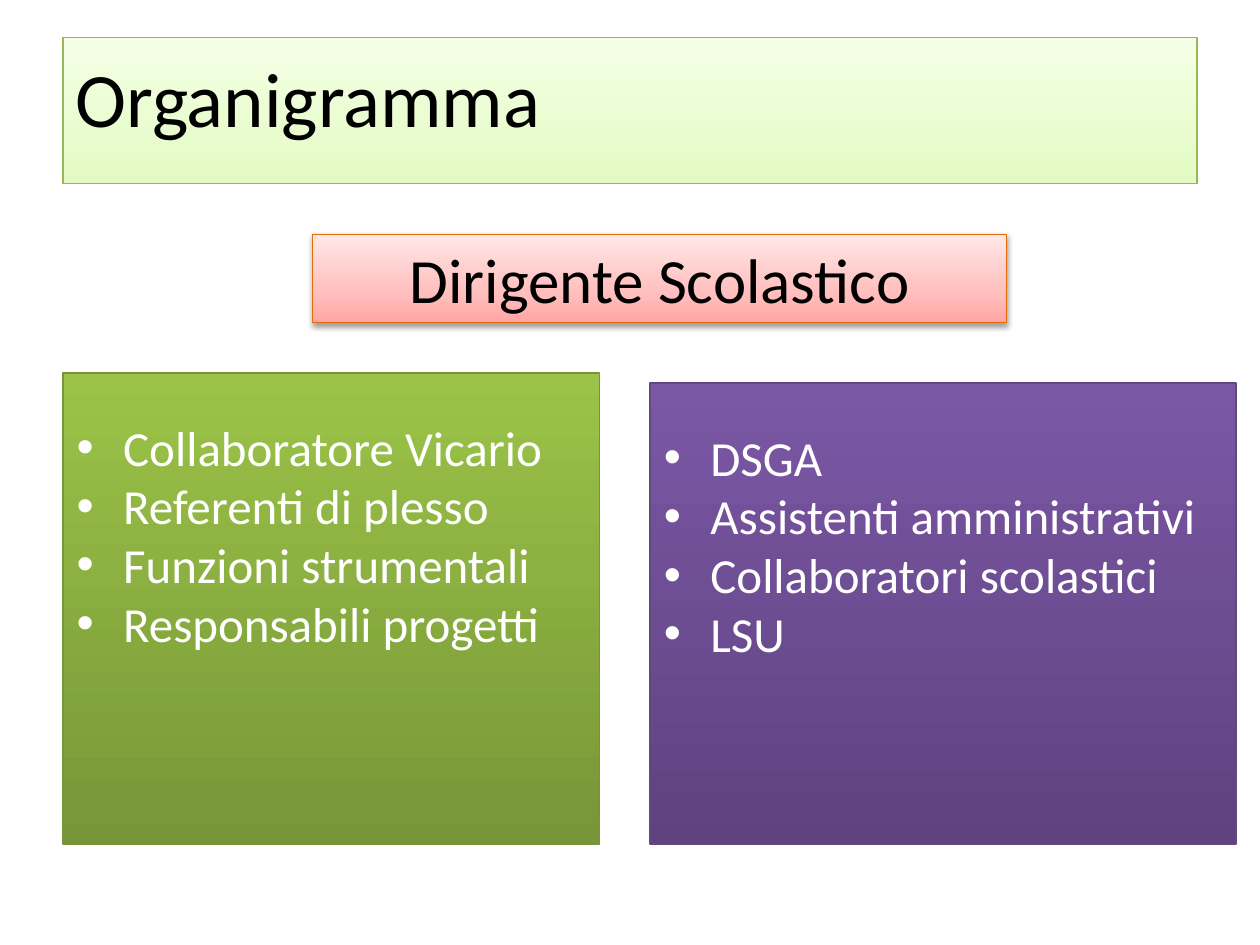
import copy
import lxml.etree
import pptx
import pptx.util
import pptx.dml.color
import pptx.enum.shapes
import pptx.enum.text
import pptx.oxml.ns

Inches, Pt = pptx.util.Inches, pptx.util.Pt
Color = pptx.dml.color.RGBColor.from_string
qn = pptx.oxml.ns.qn
ALIGN = pptx.enum.text.PP_ALIGN

HUE = {
    "black": "000000", "white": "FFFFFF",
    "mint": "E3FBC2", "pale": "F4FFE6", "mint edge": "98B855",
    "moss": "779637", "lime": "9BC348", "moss edge": "77933C",
    "plum": "5E437F", "violet": "7B57A5", "plum edge": "604A7B",
    "coral": "FFA6A5", "rose": "FFC0BF", "blush": "FFE7E7", "orange": "E46C0A",
}

deck = pptx.Presentation()
deck.slide_width, deck.slide_height = Inches(10), Inches(7.5)
col, row = deck.slide_width / 100, deck.slide_height / 75
slide = deck.slides.add_slide(deck.slide_layouts[6])


def add_box(left, top, wide, high, stops, edge, lines, size, ink, inset, align=ALIGN.LEFT):
    box = slide.shapes.add_shape(
        pptx.enum.shapes.MSO_SHAPE.RECTANGLE,
        round(left * col), round(top * row), round(wide * col), round(high * row))
    box.shadow.inherit = False
    box.fill.gradient()
    box.fill.gradient_angle = 90
    marks = box.element.xpath(".//a:gs")
    for _ in stops[2:]:
        marks[0].addnext(copy.deepcopy(marks[0]))
    for stop, (place, name) in zip(box.fill.gradient_stops, stops):
        stop.position = place
        stop.color.rgb = Color(HUE[name])
    box.line.color.rgb = Color(HUE[edge])
    box.line.width = Pt(0.75)
    frame = box.text_frame
    frame.word_wrap = True
    frame.vertical_anchor = pptx.enum.text.MSO_ANCHOR.TOP
    frame.margin_top = Inches(inset)
    frame.text = "\n".join(lines)
    for para in frame.paragraphs:
        para.alignment = align
        para.font.name = "Calibri"
        para.font.size = Pt(size)
        para.font.color.rgb = Color(HUE[ink])
    return box


add_box(5, 3, 90, 11.6, [(0, "mint"), (1, "pale")], "mint edge",
        ["Organigramma"], 44, "black", 0.1)

staff = [
    (5, 29.6, 42.6, "moss", "lime", "moss edge",
     ["Collaboratore Vicario", "Referenti di plesso",
      "Funzioni strumentali", "Responsabili progetti"]),
    (51.6, 30.4, 46.5, "plum", "violet", "plum edge",
     ["DSGA", "Assistenti amministrativi", "Collaboratori scolastici", "LSU"]),
]
base = 67
for left, top, wide, dark, light, edge, lines in staff:
    box = add_box(left, top, wide, base - top, [(0, dark), (1, light)], edge,
                  lines, 28, "white", 0.35)
    for para in box.text_frame.paragraphs:
        props = para._p.get_or_add_pPr()
        props.set("marL", str(Inches(0.38)))
        props.set("indent", str(-Inches(0.37)))
        tint = lxml.etree.SubElement(props, qn("a:buClr"))
        lxml.etree.SubElement(tint, qn("a:srgbClr"), val=HUE["white"])
        lxml.etree.SubElement(props, qn("a:buFont"), typeface="Arial")
        lxml.etree.SubElement(props, qn("a:buChar"), char="•")
        props.append(props.find(qn("a:defRPr")))

head = add_box(24.8, 18.6, 55.1, 7, [(0, "coral"), (0.35, "rose"), (1, "blush")], "orange",
               ["Dirigente Scolastico"], 36, "black", 0.05, ALIGN.CENTER)
glow = head.element.spPr.find(qn("a:effectLst"))
shade = lxml.etree.SubElement(glow, qn("a:outerShdw"), blurRad=str(Pt(3.1)), dist=str(Pt(1.6)),
                              dir="5400000", rotWithShape="0")
tone = lxml.etree.SubElement(shade, qn("a:srgbClr"), val=HUE["black"])
lxml.etree.SubElement(tone, qn("a:alpha"), val="38000")

deck.save("out.pptx")
